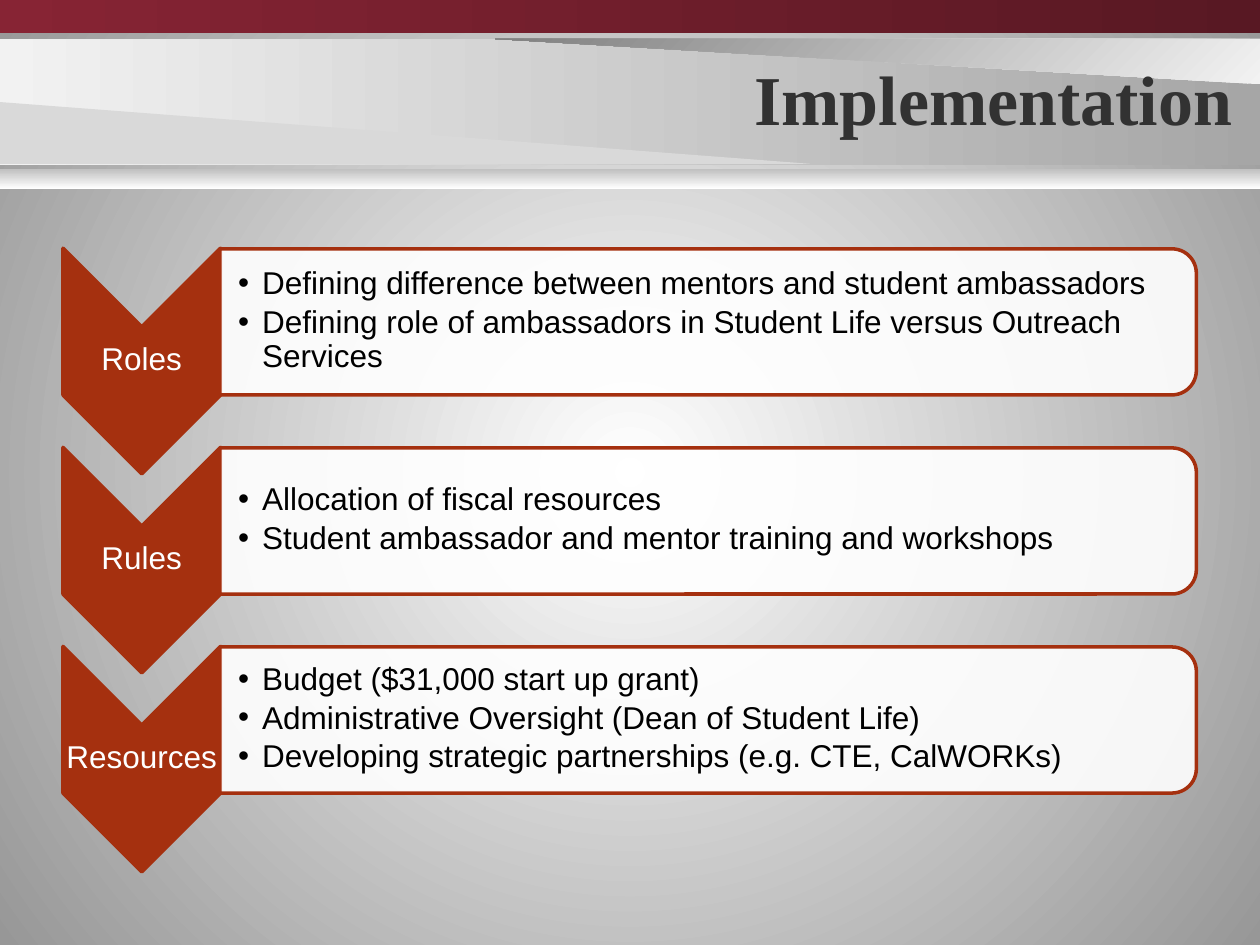
from dataclasses import dataclass

from lxml import etree
from pptx import Presentation
from pptx.dml.color import RGBColor
from pptx.enum import shapes, text
from pptx.oxml import ns
from pptx.util import Inches, Pt

WHITE = RGBColor(0xFF, 0xFF, 0xFF)
BLACK = RGBColor(0x00, 0x00, 0x00)
CHARCOAL = RGBColor(0x32, 0x32, 0x32)
RUST = RGBColor(0xA5, 0x30, 0x0F)
MAROON = RGBColor(0x87, 0x24, 0x34)
DARK_MAROON = RGBColor(0x58, 0x18, 0x23)
PALE = RGBColor(0xF2, 0xF2, 0xF2)
LIGHT = RGBColor(0xD9, 0xD9, 0xD9)
SILVER = RGBColor(0xBF, 0xBF, 0xBF)
GRAY = RGBColor(0xA6, 0xA6, 0xA6)
EDGE_GRAY = RGBColor(0x97, 0x97, 0x97)
DARK_GRAY = RGBColor(0x80, 0x80, 0x80)

FIRST_TOP = 2.02
ROW_PITCH = 1.58


@dataclass
class Box:
    left: float
    top: float
    width: float
    height: float

    def lengths(self):
        return [Inches(v) for v in (self.left, self.top, self.width, self.height)]


@dataclass
class Style:
    size: int
    font: str
    color: RGBColor
    align: text.PP_ALIGN
    bold: bool = False
    spacing: float = 1.0
    after: float = 0
    bullet: bool = False


@dataclass
class Row:
    label: str
    points: list[str]


TITLE = Style(40, "Times New Roman", CHARCOAL, text.PP_ALIGN.RIGHT, bold=True)
LABEL = Style(18, "Arial", WHITE, text.PP_ALIGN.CENTER, spacing=0.9, after=6.3)
POINT = Style(18, "Arial", BLACK, text.PP_ALIGN.LEFT, spacing=0.9, after=2.7, bullet=True)

ROWS = [
    Row("Roles", [
        "Defining difference between mentors and student ambassadors",
        "Defining role of ambassadors in Student Life versus Outreach Services",
    ]),
    Row("Rules", [
        "Allocation of fiscal resources",
        "Student ambassador and mentor training and workshops",
    ]),
    Row("Resources", [
        "Budget ($31,000 start up grant)",
        "Administrative Oversight (Dean of Student Life)",
        "Developing strategic partnerships (e.g. CTE, CalWORKs)",
    ]),
]


def set_gradient(fill, start: RGBColor, end: RGBColor, angle: float = 0) -> None:
    fill.gradient()
    fill.gradient_angle = angle
    for stop, color, position in zip(fill.gradient_stops, (start, end), (0, 1)):
        stop.color.rgb = color
        stop.position = position


def set_background(s) -> None:
    set_gradient(s.background.fill, WHITE, EDGE_GRAY)
    lin = next(s.element.iter(ns.qn("a:lin")))
    radial = etree.Element(ns.qn("a:path"), path="circle")
    etree.SubElement(radial, ns.qn("a:fillToRect"),
                     {side: "50000" for side in "ltrb"})
    lin.getparent().replace(lin, radial)


def add_band(s, box: Box, start: RGBColor, end: RGBColor, angle: float = 0) -> None:
    sp = s.shapes.add_shape(shapes.MSO_SHAPE.RECTANGLE, *box.lengths())
    sp.shadow.inherit = False
    sp.line.fill.background()
    set_gradient(sp.fill, start, end, angle)


def add_wedge(s, points: list[tuple[float, float]]):
    corners = [(Inches(x), Inches(y)) for x, y in points]
    builder = s.shapes.build_freeform(*corners[0], scale=1.0)
    builder.add_line_segments(corners[1:], close=True)
    sp = builder.convert_to_shape()
    sp.shadow.inherit = False
    sp.line.fill.background()
    return sp


def add_turned(s, kind: shapes.MSO_SHAPE, box: Box, color: RGBColor):
    sp = s.shapes.add_shape(kind, *box.lengths())
    sp.rotation = 90
    sp.shadow.inherit = False
    sp.fill.solid()
    sp.fill.fore_color.rgb = color
    sp.line.color.rgb = RUST
    sp.line.width = Pt(2)
    return sp


def set_alpha(sp, percent: int) -> None:
    color = next(sp.fill._xPr.iter(ns.qn("a:srgbClr")))
    etree.SubElement(color, ns.qn("a:alpha"), val=str(percent * 1000))


def add_bullet(p) -> None:
    p.level = 1
    props = p._p.get_or_add_pPr()
    props.set("marL", str(Inches(0.19)))
    props.set("indent", str(-Inches(0.19)))
    etree.SubElement(props, ns.qn("a:buFont"), typeface="Arial")
    etree.SubElement(props, ns.qn("a:buChar"), char="•")


def add_text(s, box: Box, lines: list[str], style: Style,
             left_inset: float = 0.01, inset: float = 0.01) -> None:
    tf = s.shapes.add_textbox(*box.lengths()).text_frame
    tf.word_wrap = True
    tf.vertical_anchor = text.MSO_ANCHOR.MIDDLE
    tf.margin_left = Inches(left_inset)
    tf.margin_top = tf.margin_right = tf.margin_bottom = Inches(inset)
    for i, line in enumerate(lines):
        p = tf.add_paragraph() if i else tf.paragraphs[0]
        if style.bullet:
            add_bullet(p)
        p.alignment = style.align
        p.line_spacing = style.spacing
        p.space_after = Pt(style.after)
        r = p.add_run()
        r.text = line
        r.font.size = Pt(style.size)
        r.font.name = style.font
        r.font.bold = style.bold
        r.font.color.rgb = style.color


def add_header(s) -> None:
    add_band(s, Box(0, 0.31, 10.01, 1), PALE, GRAY)
    upper = add_wedge(s, [(3.93, 0.31), (10.01, 0.67), (10.01, 0.31)])
    set_gradient(upper.fill, PALE, DARK_GRAY, 135)
    lower = add_wedge(s, [(0, 0.81), (6.43, 1.3), (0, 1.3)])
    lower.fill.solid()
    lower.fill.fore_color.rgb = LIGHT
    add_band(s, Box(0, 0, 10, 0.26), MAROON, DARK_MAROON)
    add_band(s, Box(0, 1.34, 10.01, 0.16), SILVER, WHITE, 270)
    add_text(s, Box(2.58, 0.3, 7.25, 0.95), ["Implementation"], TITLE, 0.1, 0.05)


def add_row(s, row: Row, top: float) -> None:
    add_turned(s, shapes.MSO_SHAPE.CHEVRON, Box(0.23, top + 0.22, 1.79, 1.25), RUST)
    add_text(s, Box(0.5, top + 0.57, 1.25, 0.54), [row.label], LABEL)
    panel = add_turned(s, shapes.MSO_SHAPE.ROUND_2_SAME_RECTANGLE,
                       Box(5.04, top - 3.34, 1.16, 7.75), WHITE)
    set_alpha(panel, 90)
    add_text(s, Box(1.75, top, 7.69, 1.05), row.points, POINT, left_inset=0.14)


def main() -> None:
    prs = Presentation()
    prs.slide_width, prs.slide_height = Inches(10), Inches(7.5)
    s = prs.slides.add_slide(prs.slide_layouts[6])
    set_background(s)
    add_header(s)
    for i, row in enumerate(ROWS):
        add_row(s, row, FIRST_TOP + i * ROW_PITCH)
    prs.save("out.pptx")


if __name__ == "__main__":
    main()
